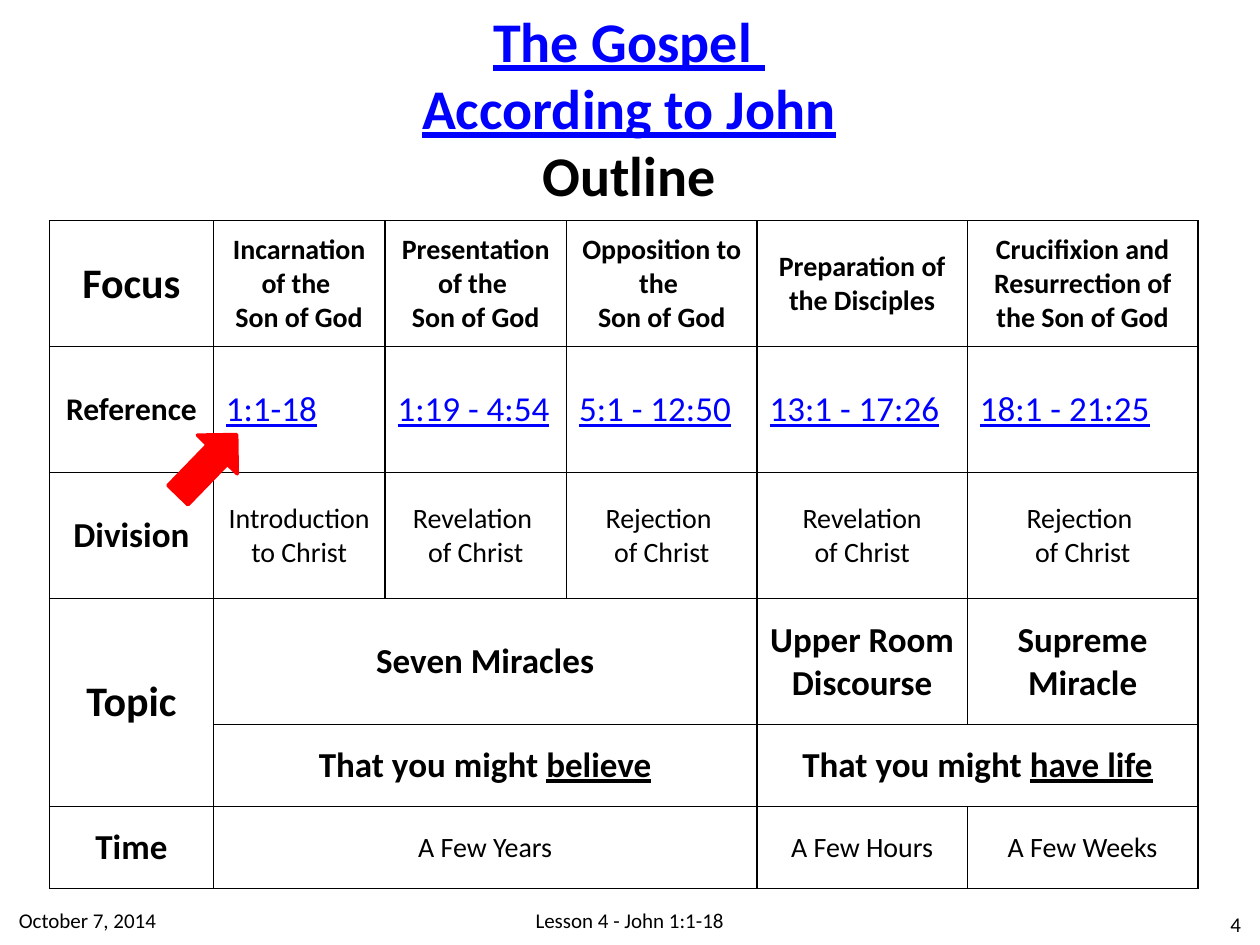
from dataclasses import dataclass, replace

from lxml.etree import SubElement
from pptx import Presentation
from pptx.dml.color import RGBColor
from pptx.enum.shapes import MSO_SHAPE
from pptx.enum.text import MSO_ANCHOR, MSO_AUTO_SIZE, PP_ALIGN
from pptx.oxml.ns import qn
from pptx.util import Cm, Pt


@dataclass(frozen=True)
class Style:
    size: int
    bold: bool = False
    underline: bool = False
    color: str = "000000"
    align: PP_ALIGN = PP_ALIGN.CENTER


class Theme:
    font = "Calibri"
    paper, ink, link, marker = "FFFFFF", "000000", "0000FF", "FF0000"
    title = Style(32, bold=True)
    title_link = replace(title, underline=True, color=link)
    label_large = Style(24, bold=True)
    label = Style(20, bold=True)
    label_small = Style(18, bold=True)
    focus = Style(16, bold=True)
    detail = Style(16)
    reference = Style(20, underline=True, color=link, align=PP_ALIGN.LEFT)
    footer = Style(12)


class OutlinePage:
    def __init__(self, deck, theme):
        self.theme = theme
        self.page = deck.slides.add_slide(deck.slide_layouts[5])

    def fill_text(self, frame, lines):
        """Each line is a list of (text, style) spans."""
        for index, spans in enumerate(lines):
            para = frame.paragraphs[0] if index == 0 else frame.add_paragraph()
            para.alignment = spans[0][1].align
            para.line_spacing = 1.0
            para.space_before = Pt(0)
            for text, style in spans:
                span = para.add_run()
                span.text = text
                font = span.font
                font.name, font.size = self.theme.font, Pt(style.size)
                font.bold, font.underline = style.bold, style.underline
                font.color.rgb = RGBColor.from_string(style.color)

    def title(self, left, top, width, height, lines):
        box = self.page.shapes.title
        box.left, box.top, box.width, box.height = map(Cm, (left, top, width, height))
        frame = box.text_frame
        frame.auto_size = MSO_AUTO_SIZE.NONE
        frame.word_wrap = False
        frame.vertical_anchor = MSO_ANCHOR.TOP
        self.fill_text(frame, lines)

    def text(self, left, top, width, height, text, align):
        box = self.page.shapes.add_textbox(*map(Cm, (left, top, width, height)))
        box.text_frame.word_wrap = True
        box.text_frame.vertical_anchor = MSO_ANCHOR.MIDDLE
        self.fill_text(box.text_frame, [[(text, replace(self.theme.footer, align=align))]])

    def border(self, cell):
        properties = cell._tc.get_or_add_tcPr()
        for side in ("a:lnL", "a:lnR", "a:lnT", "a:lnB"):
            line = SubElement(properties, qn(side), w=str(Pt(1)))
            fill = SubElement(line, qn("a:solidFill"))
            SubElement(fill, qn("a:srgbClr"), val=self.theme.ink)

    def table(self, left, top, widths, heights, entries):
        size = map(Cm, (left, top, sum(widths), sum(heights)))
        grid = self.page.shapes.add_table(len(heights), len(widths), *size).table
        for column, width in zip(grid.columns, widths):
            column.width = Cm(width)
        for row, height in zip(grid.rows, heights):
            row.height = Cm(height)
        for cell in grid.iter_cells():
            self.border(cell)
            cell.fill.solid()
            cell.fill.fore_color.rgb = RGBColor.from_string(self.theme.paper)
            cell.vertical_anchor = MSO_ANCHOR.MIDDLE
        for row, column, down, across, lines in entries:
            cell = grid.cell(row, column)
            if down * across > 1:
                cell.merge(grid.cell(row + down - 1, column + across - 1))
            self.fill_text(cell.text_frame, lines)

    def arrow(self, left, top, width, height, rotation):
        shape = self.page.shapes.add_shape(
            MSO_SHAPE.RIGHT_ARROW, *map(Cm, (left, top, width, height)))
        shape.shadow.inherit = False
        shape.rotation = rotation
        color = RGBColor.from_string(self.theme.marker)
        shape.fill.solid()
        shape.fill.fore_color.rgb = color
        shape.line.color.rgb = color
        shape.line.width = Pt(2)


def entry(row, column, style, *texts, down=1, across=1):
    return row, column, down, across, [[(text, style)] for text in texts]


def promise(column, across, ending):
    style = Theme.label
    spans = [("That you might ", style), (ending, replace(style, underline=True))]
    return 4, column, 1, across, [spans]


def outline_entries():
    theme = Theme
    labels = [
        entry(0, 0, theme.label_large, "Focus"),
        entry(1, 0, theme.label_small, "Reference"),
        entry(2, 0, theme.label, "Division"),
        entry(3, 0, theme.label_large, "Topic", down=2),
        entry(5, 0, theme.label, "Time"),
    ]
    # One section of the book per column: focus, reference, division
    sections = [
        (["Incarnation of the ", "Son of God"], "1:1-18",
         ["Introduction to Christ"]),
        (["Presentation of the ", "Son of God"], "1:19 - 4:54",
         ["Revelation ", "of Christ"]),
        (["Opposition to the ", "Son of God"], "5:1 - 12:50",
         ["Rejection ", "of Christ"]),
        (["Preparation of the Disciples"], "13:1 - 17:26",
         ["Revelation", "of Christ"]),
        (["Crucifixion and Resurrection of the Son of God"], "18:1 - 21:25",
         ["Rejection ", "of Christ"]),
    ]
    columns = []
    for column, (focus, reference, division) in enumerate(sections, start=1):
        columns += [
            entry(0, column, theme.focus, *focus),
            entry(1, column, theme.reference, reference),
            entry(2, column, theme.detail, *division),
        ]
    # Topic and time share wider cells
    groups = []
    for column, across, topic, time in [
        (1, 3, "Seven Miracles", "A Few Years"),
        (4, 1, "Upper Room Discourse", "A Few Hours"),
        (5, 1, "Supreme Miracle", "A Few Weeks"),
    ]:
        groups += [
            entry(3, column, theme.label, topic, across=across),
            entry(5, column, theme.detail, time, across=across),
        ]
    return labels + columns + groups + [promise(1, 3, "believe"), promise(4, 2, "have life")]


def main():
    deck = Presentation()
    deck.slide_width, deck.slide_height = Cm(25.4), Cm(19.05)
    outline = OutlinePage(deck, Theme)

    # Heading
    outline.title(8.08, 0, 9.2, 4.37, [
        [("The Gospel ", Theme.title_link)],
        [("According to John", Theme.title_link)],
        [("Outline", Theme.title)],
    ])

    # Outline of the book
    outline.table(1, 4.45, [3.3, 3.46, 3.66, 3.84, 4.24, 4.65],
                  [2.54] * 4 + [1.65] * 2, outline_entries())

    # Footer
    outline.text(4.34, 18.03, 16.71, 1.02, "Lesson 4 - John 1:1-18", PP_ALIGN.CENTER)
    outline.text(0.13, 18.03, 5.16, 1.02, "October 7, 2014", PP_ALIGN.LEFT)
    outline.text(23.37, 18.11, 1.9, 1.02, "4", PP_ALIGN.RIGHT)

    # Marker on the current passage
    outline.arrow(3.33, 8.81, 1.7, 1.12, 314.1)

    deck.save("out.pptx")


if __name__ == "__main__":
    main()
